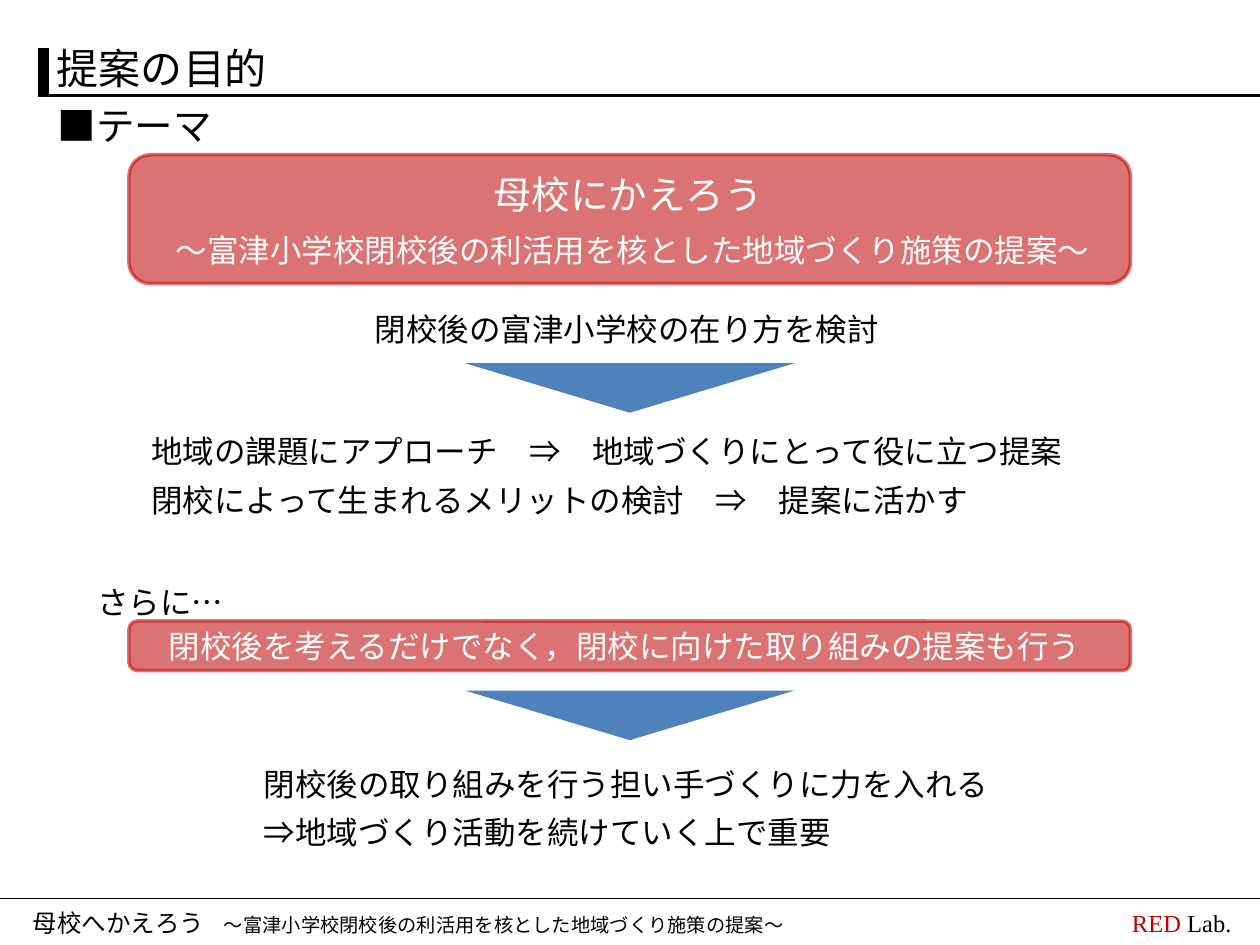
from lxml import etree
from pptx import Presentation
from pptx import util as u
from pptx.dml.color import RGBColor
from pptx.enum import shapes
from pptx.oxml.ns import qn

COLORS = {"ink": "000000", "paper": "FFFFFF", "red": "C00000", "blue": "4F81BD"}
JAPANESE, LATIN = "Noto Sans CJK JP", "Times New Roman"
WIDTH, HEIGHT = 25.4, 19.05
ROW = 1.02  # height of one 18 pt line of text


def color(name):
    return RGBColor.from_string(COLORS[name])


def style(font, size, ink="ink", face=JAPANESE):
    font.size = u.Pt(size)
    font.color.rgb = color(ink)
    font.name = face


def set_east_asian(element):
    """Use the latin typeface for East Asian characters too."""
    for latin in list(element.iter(qn("a:latin"))):
        asian = etree.Element(qn("a:ea"), typeface=latin.get("typeface"))
        latin.addnext(asian)


def add_box(page, left, top, width, height):
    box = page.shapes.add_textbox(*map(u.Cm, (left, top, width, height)))
    box.text_frame.word_wrap = False
    return box


def add_text(page, left, top, width, height, lines, size=18, ink="ink", after=0):
    box = add_box(page, left, top, width, height)
    box.text_frame.text = lines
    for para in box.text_frame.paragraphs:
        para.space_after = u.Pt(after)
        style(para.font, size, ink)
    set_east_asian(box.text_frame._txBody)


def add_spans(page, left, top, width, height, spans):
    """Add one line of text whose spans differ in style."""
    box = add_box(page, left, top, width, height)
    para = box.text_frame.paragraphs[0]
    for words, *look in spans:
        span = para.add_run()
        span.text = words
        style(span.font, *look)
    set_east_asian(box.text_frame._txBody)


def add_line(page, x1, y1, x2, y2, weight):
    line = page.shapes.add_connector(
        shapes.MSO_CONNECTOR.STRAIGHT, *map(u.Cm, (x1, y1, x2, y2)))
    line.line.width = u.Pt(weight)
    line.line.color.rgb = color("ink")
    etree.SubElement(line._element.spPr, qn("a:effectLst"))


def add_panel(page, left, top, width, height):
    """Add a translucent red rounded rectangle."""
    panel = page.shapes.add_shape(
        shapes.MSO_SHAPE.ROUNDED_RECTANGLE, *map(u.Cm, (left, top, width, height)))
    panel.shadow.inherit = False
    panel.fill.solid()
    panel.fill.fore_color.rgb = color("red")
    panel.line.color.rgb = color("red")
    panel.line.width = u.Pt(2)
    for tint in panel._element.spPr.iter(qn("a:srgbClr")):
        etree.SubElement(tint, qn("a:alpha"), val="55000")


def add_down_arrow(page, left, top, width=6.65, height=1):
    arrow = page.shapes.add_shape(
        shapes.MSO_SHAPE.ISOSCELES_TRIANGLE, *map(u.Cm, (left, top, width, height)))
    arrow.rotation = 180
    arrow.shadow.inherit = False
    arrow.fill.solid()
    arrow.fill.fore_color.rgb = color("blue")
    arrow.line.fill.background()


def add_footer(page, top):
    add_line(page, 0, top, WIDTH, top, 1)
    add_spans(page, 22.57, top + 0.08, 2.54, 0.86,
              [("RED ", 14, "red", LATIN), ("Lab.", 14, "ink", LATIN)])
    add_spans(page, 0.41, top + 0.08, 17, 0.86,
              [("母校へかえろう", 14),
               ("　～富津小学校閉校後の利活用を核とした地域づくり施策の提案～", 11)])


def add_header(page, left, base):
    add_line(page, left, base, WIDTH, base, 1.5)
    add_line(page, left + 0.11, base, left + 0.11, base - 0.96, 6)
    add_text(page, left + 0.13, base - 1.19, 4.78, 1.27, "提案の目的", 24)
    add_text(page, left + 0.15, base, 3.66, 1.19, "■テーマ", 22)


def add_theme(page, left, top, width):
    add_panel(page, left, top, width, 2.6)
    add_text(page, left + 0.69, top + 1.41, 19.1, ROW,
             "～富津小学校閉校後の利活用を核とした地域づくり施策の提案～", ink="paper")
    add_text(page, left + 7.1, top + 0.21, 5.99, 1.19, "母校にかえろう", 22, "paper")


def add_study(page, left, top):
    add_text(page, left + 4.51, top, 10.77, ROW, "閉校後の富津小学校の在り方を検討")
    add_down_arrow(page, left + 6.57, top + 1.2)
    add_text(page, left, top + 2.47, 19.76, ROW,
             "地域の課題にアプローチ　⇒　地域づくりにとって役に立つ提案")
    add_text(page, left, top + 3.46, 17.2, ROW,
             "閉校によって生まれるメリットの検討　⇒　提案に活かす")


def add_further(page, left, top, width):
    add_text(page, left - 0.89, top - 0.89, 3.07, ROW, "さらに…")
    add_panel(page, left, top, width, 1)
    add_text(page, left + 0.55, top, 19.1, ROW,
             "閉校後を考えるだけでなく，閉校に向けた取り組みの提案も行う", ink="paper")
    add_down_arrow(page, left + 6.77, top + 1.4)
    add_text(page, left + 2.47, top + 2.77, 15.27, 2.01,
             "閉校後の取り組みを行う担い手づくりに力を入れる\n"
             "⇒地域づくり活動を続けていく上で重要", after=6)


def main():
    deck = Presentation()
    deck.slide_width, deck.slide_height = u.Cm(WIDTH), u.Cm(HEIGHT)
    page = deck.slides.add_slide(deck.slide_layouts[6])
    add_footer(page, 18.11)
    add_header(page, 0.77, 1.93)
    add_theme(page, 2.6, 3.12, 20.19)
    add_study(page, 2.8, 6.12)
    add_further(page, 2.6, 12.52, 20.19)
    deck.save("out.pptx")


if __name__ == "__main__":
    main()
